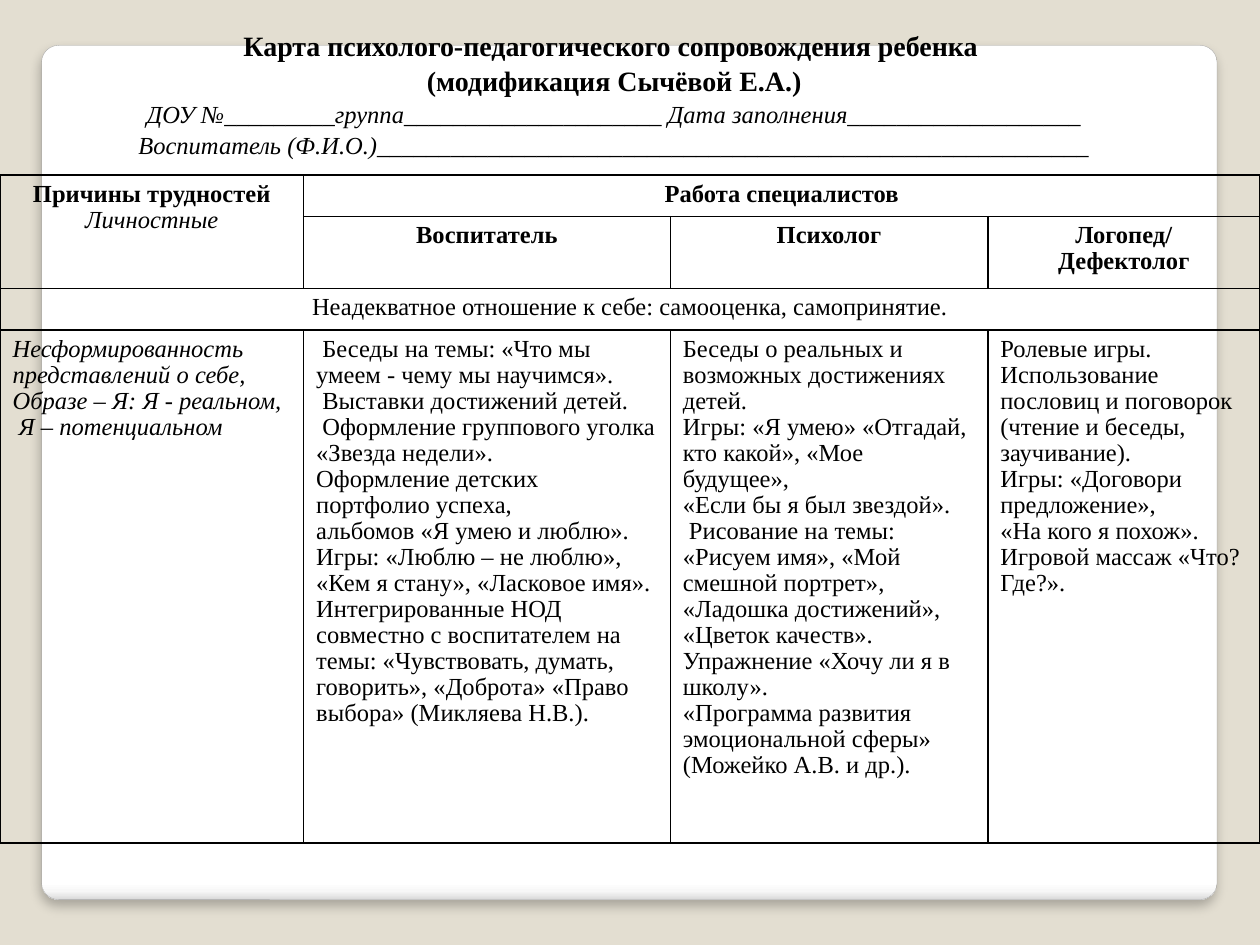
from pptx import Presentation
from pptx.dml.color import RGBColor
from pptx.enum.shapes import MSO_SHAPE
from pptx.enum.text import MSO_ANCHOR, MSO_AUTO_SIZE, PP_ALIGN
from pptx.oxml import parse_xml
from pptx.oxml.ns import nsdecls, qn
from pptx.util import Inches, Pt

CARD = MSO_SHAPE.ROUNDED_RECTANGLE
TOP = MSO_ANCHOR.TOP
FIXED = MSO_AUTO_SIZE.NONE
LEFT, CENTER = PP_ALIGN.LEFT, PP_ALIGN.CENTER
FACE = "Times New Roman"
STOPS = ((0, "FFFFFF"), (98, "FFFFFF"), (99, "F7F7F7"), (100, "DADADA"))

COLS = (2.41, 2.91, 2.52, 2.16)
ROWS = (0.33, 0.57, 0.33, 4.07)
MERGES = (((0, 0), (1, 0)), ((0, 1), (0, 3)), ((2, 0), (2, 3)))

TITLE = (
    ("Карта психолого-педагогического сопровождения ребенка ", 16, "b"),
    ("(модификация Сычёвой Е.А.)", 16, "b"),
    ("ДОУ №_________группа_____________________ Дата заполнения___________________", 14, "i"),
    ("Воспитатель (Ф.И.О.)__________________________________________________________", 14, "i"),
)
HEADS = {
    (0, 0): (("Причины трудностей", 14, "b"), ("Личностные", 14, "i")),
    (0, 1): (("Работа специалистов", 14, "b"),),
    (1, 1): (("Воспитатель", 14, "b"),),
    (1, 2): (("Психолог", 14, "b"),),
    (1, 3): (("Логопед/", 14, "b"), ("Дефектолог", 14, "b")),
    (2, 0): (("Неадекватное отношение к себе: самооценка, самопринятие.", 14, ""),),
}
BODY = (
    ("i", (
        "Несформированность представлений о себе, Образе – Я: Я - реальном,",
        " Я – потенциальном",
    )),
    ("", (
        " Беседы на темы: «Что мы умеем - чему мы научимся».",
        " Выставки достижений детей.",
        " Оформление группового уголка «Звезда недели».",
        "Оформление детских портфолио успеха,",
        "альбомов «Я умею и люблю». Игры: «Люблю – не люблю», «Кем я стану», «Ласковое имя».",
        "Интегрированные НОД совместно с воспитателем на темы: «Чувствовать, думать, "
        "говорить», «Доброта» «Право выбора» (Микляева Н.В.).",
    )),
    ("", (
        "Беседы о реальных и возможных достижениях детей.",
        "Игры: «Я умею» «Отгадай, кто какой», «Мое будущее»,",
        "«Если бы я был звездой».",
        " Рисование на темы:",
        "«Рисуем имя», «Мой смешной портрет»,",
        "«Ладошка достижений»,",
        "«Цветок качеств». Упражнение «Хочу ли я в школу».",
        "«Программа развития эмоциональной сферы» (Можейко А.В. и др.).",
    )),
    ("", (
        "Ролевые игры. Использование пословиц и поговорок",
        "(чтение и беседы, заучивание).",
        "Игры: «Договори предложение»,",
        "«На кого я похож».",
        "Игровой массаж «Что? Где?».",
    )),
)


def color(code):
    """Return the colour for a hex string."""
    return RGBColor.from_string(code)


def write(frame, lines, align, gap):
    """Fill a text frame with (text, size, style) lines."""
    for i, (text, size, style) in enumerate(lines):
        para = frame.add_paragraph() if i else frame.paragraphs[0]
        para.text = text
        para.alignment = align
        para.line_spacing = gap
        font = para.font
        font.name, font.size = FACE, Pt(size)
        font.bold, font.italic = style == "b", style == "i"
        font.color.rgb = color("000000")


def add_card(slide):
    """Add the white rounded card behind everything else."""
    card = slide.shapes.add_shape(CARD, Inches(0.33), Inches(0.36), Inches(9.33), Inches(6.78))
    card.adjustments[0] = 0.02
    card.fill.gradient()
    card.fill.gradient_angle = 270
    stops = card.element.spPr.find(".//" + qn("a:gsLst"))
    for stop in list(stops):
        stops.remove(stop)
    for place, code in STOPS:
        stops.append(parse_xml(
            f'<a:gs {nsdecls("a")} pos="{place * 1000}"><a:srgbClr val="{code}"/></a:gs>'))
    card.line.color.rgb = color("A4A4A4")
    card.line.width = Pt(0.16)
    card.element.spPr.append(parse_xml(
        f'<a:effectLst {nsdecls("a")}><a:outerShdw blurRad="{Pt(6)}" dist="{Pt(4)}" '
        'dir="5400000" algn="t" rotWithShape="0"><a:srgbClr val="000000">'
        '<a:alpha val="25000"/></a:srgbClr></a:outerShdw></a:effectLst>'))
    slide.shapes.title.element.addprevious(card.element)


def set_title(slide):
    """Place and fill the title."""
    title = slide.shapes.title
    title.left, title.top = Inches(0.27), Inches(0.16)
    title.width, title.height = Inches(9.21), Inches(1.33)
    frame = title.text_frame
    frame.word_wrap = True
    frame.auto_size = FIXED
    frame.vertical_anchor = TOP
    write(frame, TITLE, CENTER, 1.06)


def frame_cell(cell):
    """Give a cell thin black borders and no fill."""
    props = cell._tc.get_or_add_tcPr()
    for side in "LRTB":
        props.append(parse_xml(
            f'<a:ln{side} {nsdecls("a")} w="{Pt(1)}"><a:solidFill>'
            f'<a:srgbClr val="000000"/></a:solidFill></a:ln{side}>'))
    cell.fill.background()


def add_grid(slide):
    """Add the table of specialists' work."""
    grid = slide.shapes.add_table(
        len(ROWS), len(COLS), 0, Inches(1.39), Inches(sum(COLS)), Inches(sum(ROWS))).table
    grid.first_row = grid.horz_banding = False
    for col, width in zip(grid.columns, COLS):
        col.width = Inches(width)
    for row, height in zip(grid.rows, ROWS):
        row.height = Inches(height)
    for cell in grid.iter_cells():
        frame_cell(cell)
    for start, end in MERGES:
        grid.cell(*start).merge(grid.cell(*end))
    for spot, lines in HEADS.items():
        write(grid.cell(*spot).text_frame, lines, CENTER, 0.96)
    for i, (style, texts) in enumerate(BODY):
        lines = [(text, 14, style) for text in texts]
        write(grid.cell(3, i).text_frame, lines, LEFT, 0.96)


def main():
    """Build and save the slide."""
    deck = Presentation()
    deck.slide_width, deck.slide_height = Inches(10), Inches(7.5)
    slide = deck.slides.add_slide(deck.slide_layouts[5])
    back = slide.background.fill
    back.solid()
    back.fore_color.rgb = color("E3DED1")
    add_card(slide)
    set_title(slide)
    add_grid(slide)
    deck.save("out.pptx")


if __name__ == "__main__":
    main()
